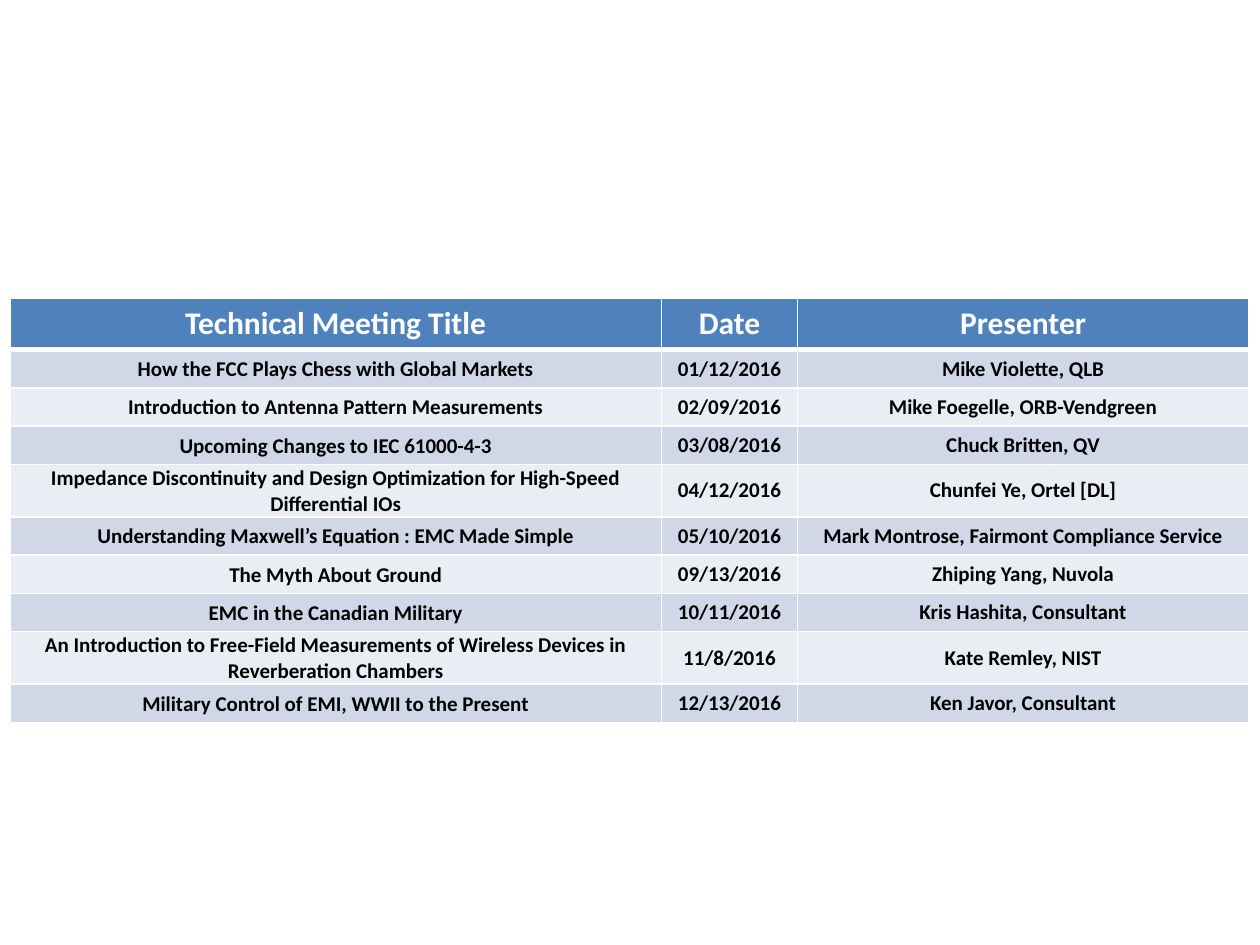
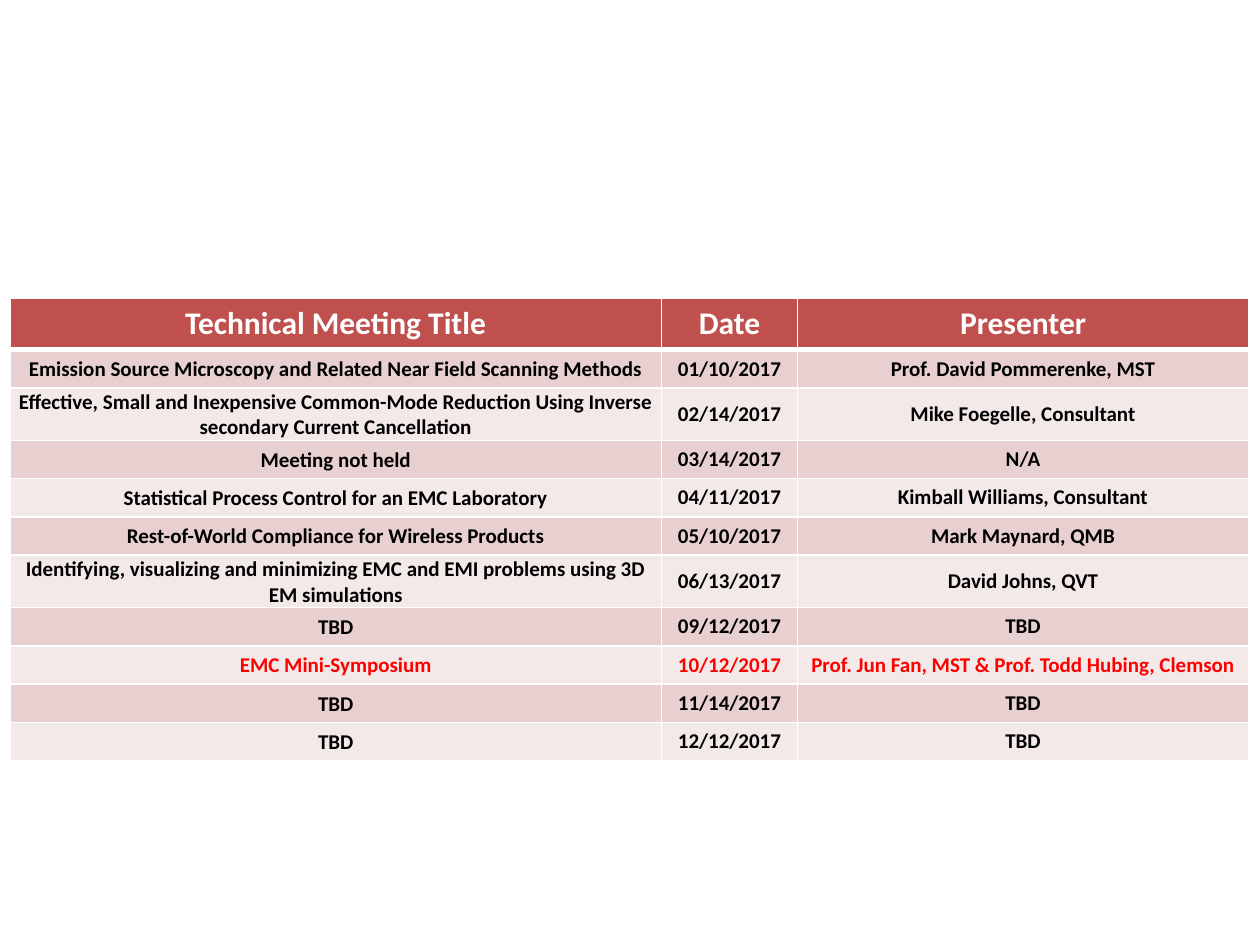
from dataclasses import dataclass

from lxml import etree
from pptx import Presentation
from pptx.dml.color import RGBColor
from pptx.enum.text import MSO_ANCHOR, PP_ALIGN
from pptx.oxml.ns import qn
from pptx.util import Pt

MIDDLE = MSO_ANCHOR.MIDDLE
CENTER = PP_ALIGN.CENTER
BLANK_LAYOUT = 6


@dataclass(frozen=True)
class Theme:
    font: str = "Calibri"
    header_size: float = 18
    body_size: float = 12
    light: str = "FFFFFF"
    dark: str = "000000"
    highlight: str = "FF0000"
    thin_line: float = 1
    thick_line: float = 3


@dataclass(frozen=True)
class Palette:
    header: str
    odd_row: str
    even_row: str


@dataclass(frozen=True)
class Meeting:
    title: str
    date: str
    presenter: str
    highlighted: bool = False


THEME = Theme()
BLUE = Palette("4F81BD", "D0D8E8", "E9EDF4")
RED = Palette("C0504D", "E8D0D0", "F4E9E9")

TABLE_LEFT, TABLE_TOP = 5.76, 170.64
COLUMN_WIDTHS = (372.24, 77.76, 257.76)
HEADER_HEIGHT, TALL_HEIGHT, SHORT_HEIGHT = 24, 19.5, 13
TALL_ROWS = 4
TITLE_INSET = 0.72

HEADER = Meeting("Technical Meeting Title", "Date", "Presenter")
MEETINGS_2016 = [
    Meeting("How the FCC Plays Chess with Global Markets", "01/12/2016", "Mike Violette, QLB"),
    Meeting("Introduction to Antenna Pattern Measurements", "02/09/2016",
            "Mike Foegelle, ORB-Vendgreen"),
    Meeting("Upcoming Changes to IEC 61000-4-3", "03/08/2016", "Chuck Britten, QV"),
    Meeting("Impedance Discontinuity and Design Optimization for High-Speed Differential IOs",
            "04/12/2016", "Chunfei Ye, Ortel [DL]"),
    Meeting("Understanding Maxwell’s Equation : EMC Made Simple", "05/10/2016",
            "Mark Montrose, Fairmont Compliance Service"),
    Meeting("The Myth About Ground", "09/13/2016", "Zhiping Yang, Nuvola"),
    Meeting("EMC in the Canadian Military", "10/11/2016", "Kris Hashita, Consultant"),
    Meeting("An Introduction to Free-Field Measurements of Wireless Devices in "
            "Reverberation Chambers", "11/8/2016", "Kate Remley, NIST"),
    Meeting("Military Control of EMI, WWII to the Present", "12/13/2016",
            "Ken Javor, Consultant"),
]
MEETINGS_2017 = [
    Meeting("Emission Source Microscopy and Related Near Field Scanning Methods", "01/10/2017",
            "Prof. David Pommerenke, MST"),
    Meeting("Effective, Small and Inexpensive Common-Mode Reduction Using Inverse "
            "secondary Current Cancellation", "02/14/2017", "Mike Foegelle, Consultant"),
    Meeting("Meeting not held", "03/14/2017", "N/A"),
    Meeting("Statistical Process Control for an EMC Laboratory", "04/11/2017",
            "Kimball Williams, Consultant"),
    Meeting("Rest-of-World Compliance for Wireless Products", "05/10/2017",
            "Mark Maynard, QMB"),
    Meeting("Identifying, visualizing and minimizing EMC and EMI problems using 3D "
            "EM simulations", "06/13/2017", "David Johns, QVT"),
    Meeting("TBD", "09/12/2017", "TBD"),
    Meeting("EMC Mini-Symposium", "10/12/2017",
            "Prof. Jun Fan, MST & Prof. Todd Hubing, Clemson", highlighted=True),
    Meeting("TBD", "11/14/2017", "TBD"),
    Meeting("TBD", "12/12/2017", "TBD"),
]


def set_borders(cell, top, bottom):
    """Draw light lines on all four sides; top and bottom are widths in points."""
    properties = cell._tc.get_or_add_tcPr()
    widths = {"lnL": THEME.thin_line, "lnR": THEME.thin_line, "lnT": top, "lnB": bottom}
    for side, width in widths.items():
        line = etree.SubElement(properties, qn(f"a:{side}"), w=str(Pt(width)))
        fill = etree.SubElement(line, qn("a:solidFill"))
        etree.SubElement(fill, qn("a:srgbClr"), val=THEME.light)


def style_cell(cell, text, fill, color, size):
    cell.fill.solid()
    cell.fill.fore_color.rgb = RGBColor.from_string(fill)
    cell.vertical_anchor = MIDDLE
    cell.text = text
    para = cell.text_frame.paragraphs[0]
    para.alignment = CENTER
    para.font.name = THEME.font
    para.font.size = Pt(size)
    para.font.bold = True
    para.font.color.rgb = RGBColor.from_string(color)


def tighten_margins(cell):
    cell.margin_left = cell.margin_right = cell.margin_top = Pt(TITLE_INSET)
    cell.margin_bottom = 0


def row_height(index):
    """Minimum height; the text makes a row taller where needed."""
    if index == 0:
        return HEADER_HEIGHT
    return TALL_HEIGHT if index <= TALL_ROWS else SHORT_HEIGHT


def row_style(index, meeting, palette):
    """Return the fill, text colour and text size of a row."""
    if index == 0:
        return palette.header, THEME.light, THEME.header_size
    fill = palette.odd_row if index % 2 else palette.even_row
    color = THEME.highlight if meeting.highlighted else THEME.dark
    return fill, color, THEME.body_size


def add_meeting_table(page, meetings, palette, height):
    rows = [HEADER, *meetings]
    frame = page.shapes.add_table(len(rows), len(COLUMN_WIDTHS), Pt(TABLE_LEFT), Pt(TABLE_TOP),
                                  Pt(sum(COLUMN_WIDTHS)), Pt(height))
    table = frame.table
    for column, width in zip(table.columns, COLUMN_WIDTHS):
        column.width = Pt(width)
    for index, meeting in enumerate(rows):
        table.rows[index].height = Pt(row_height(index))
        style = row_style(index, meeting, palette)
        top = THEME.thick_line if index == 1 else THEME.thin_line
        bottom = THEME.thick_line if index == 0 else THEME.thin_line
        texts = (meeting.title, meeting.date, meeting.presenter)
        for cell, text in zip(table.rows[index].cells, texts):
            set_borders(cell, top, bottom)
            style_cell(cell, text, *style)
        if index > 0:
            tighten_margins(table.cell(index, 0))
    frame.height = Pt(height)


def main():
    deck = Presentation()
    deck.slide_width, deck.slide_height = Pt(720), Pt(540)
    schedules = ((MEETINGS_2016, BLUE, 239), (MEETINGS_2017, RED, 260.6))
    for meetings, palette, height in schedules:
        page = deck.slides.add_slide(deck.slide_layouts[BLANK_LAYOUT])
        add_meeting_table(page, meetings, palette, height)
    deck.save("out.pptx")


if __name__ == "__main__":
    main()
